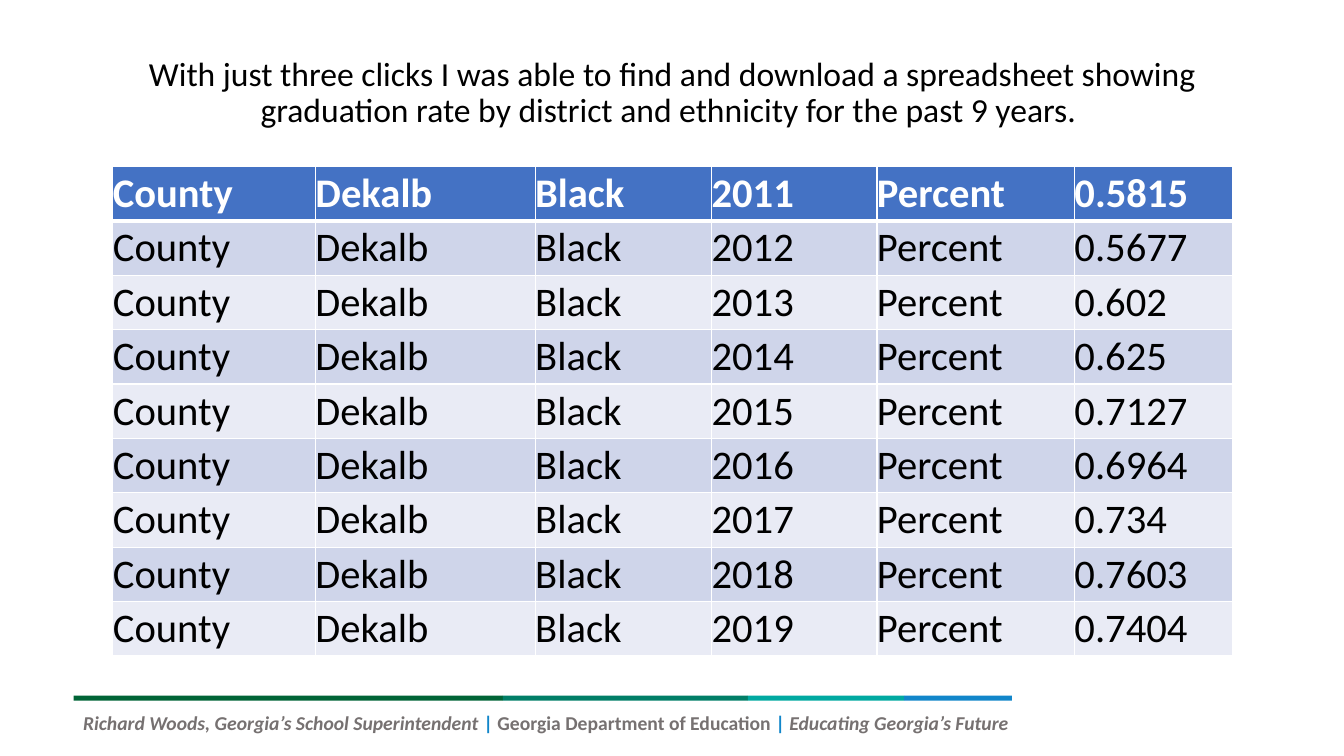
from dataclasses import dataclass

from lxml import etree
from pptx import Presentation
from pptx.dml.color import RGBColor
from pptx.enum.shapes import MSO_SHAPE
from pptx.enum.text import MSO_ANCHOR, MSO_AUTO_SIZE, PP_ALIGN
from pptx.oxml.ns import qn
from pptx.util import Pt

RECTANGLE = MSO_SHAPE.RECTANGLE
BOTTOM = MSO_ANCHOR.BOTTOM
MIDDLE = MSO_ANCHOR.MIDDLE
CENTER = PP_ALIGN.CENTER
LEFT = PP_ALIGN.LEFT
RIGHT = PP_ALIGN.RIGHT
NO_AUTOFIT = MSO_AUTO_SIZE.NONE
TITLE_ONLY = 5


@dataclass(frozen=True)
class Theme:
    font: str = "Calibri"
    title_size: float = 24
    table_size: float = 29
    footer_size: float = 14
    ink: str = "000000"
    white: str = "FFFFFF"
    header: str = "4472C4"
    bands: tuple = ("CFD5EA", "E9EBF5")
    footer: str = "767171"
    divider: str = "1186CA"
    stripe: tuple = ("006436", "007E67", "00A9A1", "1186CA")
    border: float = 1
    header_border: float = 3


class SlideBuilder:
    def __init__(self, slide, theme):
        self.slide = slide
        self.theme = theme

    def add_run(self, paragraph, text, size, color, bold=False, italic=False):
        run = paragraph.add_run()
        run.text = text
        font = run.font
        font.name = self.theme.font
        font.size = Pt(size)
        font.bold = bold
        font.italic = italic
        font.color.rgb = RGBColor.from_string(color)

    def title(self, text, left, top, width, height):
        title = self.slide.shapes.title
        title.left, title.top = Pt(left), Pt(top)
        title.width, title.height = Pt(width), Pt(height)
        frame = title.text_frame
        frame.word_wrap = True
        frame.auto_size = NO_AUTOFIT
        frame.vertical_anchor = BOTTOM
        paragraph = frame.paragraphs[0]
        paragraph.alignment = CENTER
        paragraph.line_spacing = 0.9
        paragraph.space_before = Pt(0)
        paragraph.space_after = Pt(6)
        self.add_run(paragraph, text, self.theme.title_size, self.theme.ink)

    def stripe(self, left, top, widths, height):
        for width, color in zip(widths, self.theme.stripe):
            segment = self.slide.shapes.add_shape(
                RECTANGLE, Pt(left), Pt(top), Pt(width), Pt(height))
            segment.shadow.inherit = False
            segment.fill.solid()
            segment.fill.fore_color.rgb = RGBColor.from_string(color)
            segment.line.fill.background()
            left += width

    def footer(self, parts, left, top, width, height):
        footer = self.slide.shapes.add_textbox(
            Pt(left), Pt(top), Pt(width), Pt(height))
        frame = footer.text_frame
        frame.word_wrap = True
        paragraph = frame.paragraphs[0]
        paragraph.alignment = RIGHT
        for text, color, italic in parts:
            self.add_run(paragraph, text, self.theme.footer_size, color,
                         bold=True, italic=italic)

    def borders(self, cell, top, bottom):
        properties = cell._tc.get_or_add_tcPr()
        side = self.theme.border
        edges = (("a:lnL", side), ("a:lnR", side),
                 ("a:lnT", top), ("a:lnB", bottom))
        for position, (tag, width) in enumerate(edges):
            edge = etree.Element(qn(tag), w=str(Pt(width)))
            fill = etree.SubElement(edge, qn("a:solidFill"))
            etree.SubElement(fill, qn("a:srgbClr"), val=self.theme.white)
            properties.insert(position, edge)

    def cell(self, cell, text, row):
        theme = self.theme
        is_header = row == 0
        fill = theme.header if is_header else theme.bands[(row - 1) % 2]
        cell.fill.solid()
        cell.fill.fore_color.rgb = RGBColor.from_string(fill)
        cell.margin_left = cell.margin_right = Pt(0)
        cell.margin_top = cell.margin_bottom = Pt(0)
        cell.vertical_anchor = MIDDLE
        paragraph = cell.text_frame.paragraphs[0]
        paragraph.alignment = LEFT
        self.add_run(paragraph, text, theme.table_size,
                     theme.white if is_header else theme.ink, bold=is_header)
        self.borders(cell,
                     theme.header_border if row == 1 else theme.border,
                     theme.header_border if is_header else theme.border)

    def table(self, records, left, top, widths, row_height):
        frame = self.slide.shapes.add_table(
            len(records), len(widths), Pt(left), Pt(top),
            Pt(sum(widths)), Pt(row_height * len(records)))
        table = frame.table
        for column, width in zip(table.columns, widths):
            column.width = Pt(width)
        for row, record in enumerate(records):
            table.rows[row].height = Pt(row_height)
            for column, text in enumerate(record):
                self.cell(table.cell(row, column), text, row)


def main():
    theme = Theme()
    presentation = Presentation()
    presentation.slide_width = Pt(960)
    presentation.slide_height = Pt(540)
    layout = presentation.slide_layouts[TITLE_ONLY]
    builder = SlideBuilder(presentation.slides.add_slide(layout), theme)

    builder.stripe(52.56, 496.8, (306.72, 174.96, 111.6, 77.04), 3.6)
    builder.footer((
        ("Richard Woods, Georgia’s School Superintendent ", theme.footer, True),
        ("|", theme.divider, False),
        (" Georgia Department of Education ", theme.footer, False),
        ("| ", theme.divider, False),
        ("Educating Georgia’s Future ", theme.footer, True),
    ), 39.6, 504, 691.2, 41)
    builder.title(
        "With just three clicks I was able to find and download a spreadsheet "
        "showing graduation rate by district and ethnicity for the past 9 years. ",
        66.24, 23.04, 828, 73.44)

    rates = ("0.5815", "0.5677", "0.602", "0.625", "0.7127",
             "0.6964", "0.734", "0.7603", "0.7404")
    records = [("County", "Dekalb", "Black", str(year), "Percent", rate)
               for year, rate in enumerate(rates, start=2011)]
    builder.table(records, 80.64, 118.8,
                  (144.72, 156.96, 126, 118.08, 141.12, 113.04), 38.88)

    presentation.save("out.pptx")


if __name__ == "__main__":
    main()
